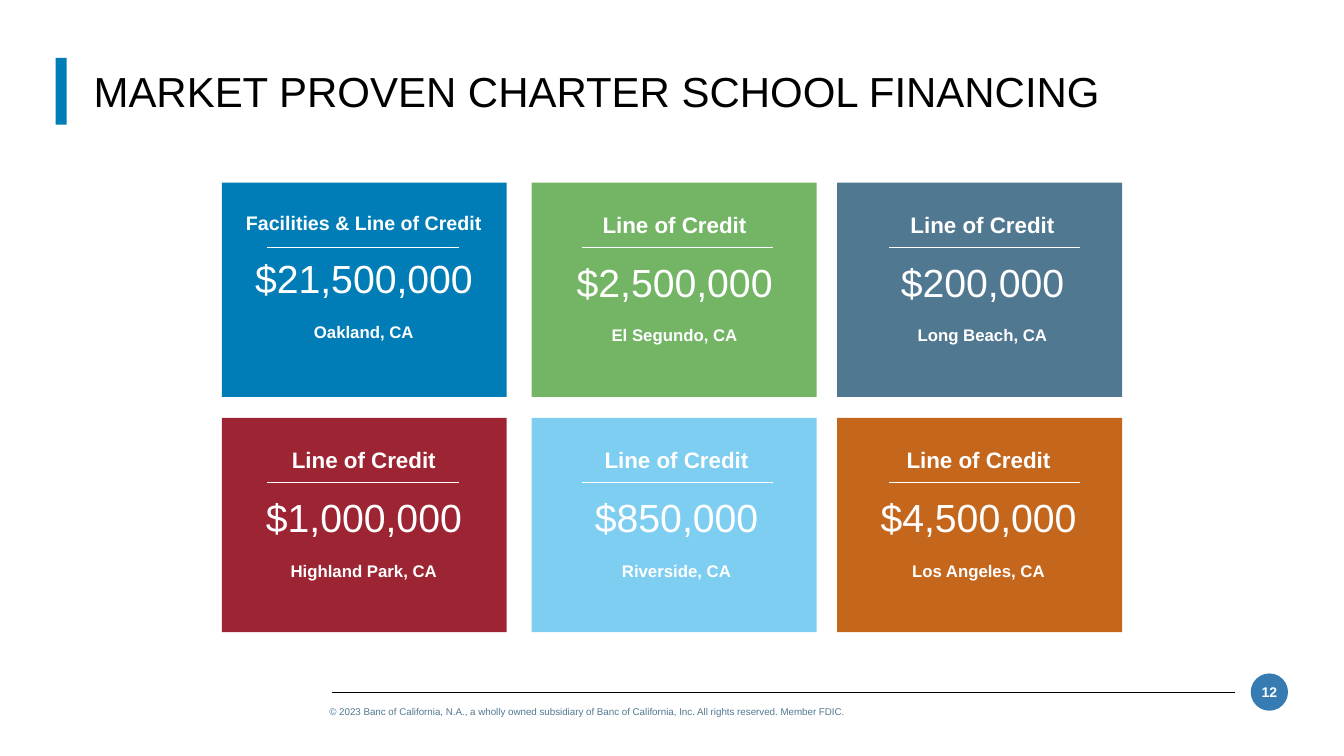
import dataclasses

import lxml.etree
import pptx
import pptx.dml.color
import pptx.enum.shapes
import pptx.enum.text
import pptx.oxml.ns
import pptx.util

Cm = pptx.util.Cm
Pt = pptx.util.Pt
ShapeKind = pptx.enum.shapes.MSO_SHAPE
Align = pptx.enum.text.PP_ALIGN


@dataclasses.dataclass(frozen=True)
class Theme:
    """Colours, font and type sizes of the slide."""
    font: str = "Arial"
    black: str = "000000"
    white: str = "FFFFFF"
    blue: str = "007DB6"
    badge: str = "367BB1"
    green: str = "73B564"
    slate: str = "517891"
    red: str = "9D2432"
    sky: str = "7DCEF1"
    orange: str = "C5661D"
    title: float = 30
    amount: float = 28
    heading: float = 16
    long_heading: float = 14
    place: float = 12
    number: float = 10
    footer: float = 7


class SlideBuilder:
    """Draws styled elements on one slide, with lengths in centimetres."""

    def __init__(self, slide, theme):
        self.slide = slide
        self.theme = theme

    def block(self, kind, left, top, width, height, color):
        """Add a filled preset shape without an outline."""
        shape = self.slide.shapes.add_shape(kind, Cm(left), Cm(top), Cm(width), Cm(height))
        shape.shadow.inherit = False
        shape.fill.solid()
        shape.fill.fore_color.rgb = pptx.dml.color.RGBColor.from_string(color)
        shape.line.fill.background()

    def rule(self, left, top, width, color, weight):
        """Add a horizontal line."""
        line = self.slide.shapes.add_connector(
            pptx.enum.shapes.MSO_CONNECTOR.STRAIGHT, Cm(left), Cm(top), Cm(left + width), Cm(top))
        line.line.color.rgb = pptx.dml.color.RGBColor.from_string(color)
        line.line.width = Pt(weight)
        properties = line._element.spPr
        lxml.etree.SubElement(properties, pptx.oxml.ns.qn("a:effectLst"))

    def text(self, left, top, width, height, lines, color, align=Align.LEFT,
             inset=0.25, spacing=1.0, gap=0):
        """Add a text box whose lines are (text, size, bold) tuples."""
        shape = self.slide.shapes.add_textbox(Cm(left), Cm(top), Cm(width), Cm(height))
        frame = shape.text_frame
        frame.word_wrap = True
        frame.auto_size = pptx.enum.text.MSO_AUTO_SIZE.SHAPE_TO_FIT_TEXT
        frame.margin_left = frame.margin_right = Cm(inset)
        frame.text = "\n".join(words for words, size, bold in lines)
        for index, (paragraph, (words, size, bold)) in enumerate(zip(frame.paragraphs, lines)):
            paragraph.alignment = align
            paragraph.line_spacing = spacing
            paragraph.space_before = Pt(gap if index else 0)
            font = paragraph.runs[0].font
            font.name = self.theme.font
            font.size = Pt(size)
            font.bold = bold
            font.color.rgb = pptx.dml.color.RGBColor.from_string(color)

    def card(self, left, top, text_left, rule_left, color, heading, heading_size, amount, place):
        """Add one financing card with heading, rule, amount and place."""
        theme = self.theme
        self.block(ShapeKind.RECTANGLE, left, top, 7.18, 5.4, color)
        lines = [(heading, heading_size, True), (amount, theme.amount, False),
                 (place, theme.place, True)]
        self.text(text_left, top + 0.59, 7.32, 3.7, lines, theme.white,
                  align=Align.CENTER, inset=0, spacing=1.01, gap=14)
        self.rule(rule_left, top + 1.63, 4.83, theme.white, 0.75)


def main():
    """Build the slide and save it."""
    presentation = pptx.Presentation()
    presentation.slide_width = Cm(33.87)
    presentation.slide_height = Cm(19.05)
    theme = Theme()
    builder = SlideBuilder(presentation.slides.add_slide(presentation.slide_layouts[6]), theme)

    copyright_line = ("© 2023 Banc of California, N.A., a wholly owned subsidiary of "
                      "Banc of California, Inc. All rights reserved. Member FDIC.")
    builder.text(8.05, 17.65, 21.72, 0.56, [(copyright_line, theme.footer, False)], theme.slate)
    builder.block(ShapeKind.RECTANGLE, 1.4, 1.46, 0.28, 1.68, theme.blue)
    builder.block(ShapeKind.OVAL, 31.52, 16.97, 0.94, 0.94, theme.badge)
    builder.rule(8.36, 17.45, 22.76, theme.black, 0.25)
    builder.text(31.34, 17.09, 1.3, 1.02, [("12", theme.number, True)], theme.white,
                 align=Align.CENTER)

    credit = ("Line of Credit", theme.heading)
    facilities = ("Facilities & Line of Credit", theme.long_heading)
    card_lefts = (5.59, 13.4, 21.1)
    rule_lefts = (6.73, 14.66, 22.4)
    rows = [
        (4.6, [(5.51, theme.blue, *facilities, "$21,500,000", "Oakland, CA"),
               (13.34, theme.green, *credit, "$2,500,000", "El Segundo, CA"),
               (21.1, theme.slate, *credit, "$200,000", "Long Beach, CA")]),
        (10.53, [(5.51, theme.red, *credit, "$1,000,000", "Highland Park, CA"),
                 (13.39, theme.sky, *credit, "$850,000", "Riverside, CA"),
                 (21.0, theme.orange, *credit, "$4,500,000", "Los Angeles, CA")]),
    ]
    for top, cards in rows:
        for left, rule_left, (text_left, *content) in zip(card_lefts, rule_lefts, cards):
            builder.card(left, top, text_left, rule_left, *content)

    title = "MARKET PROVEN CHARTER SCHOOL FINANCING"
    builder.text(2.11, 1.52, 28.32, 1.55, [(title, theme.title, False)], theme.black)
    presentation.save("out.pptx")


if __name__ == "__main__":
    main()
